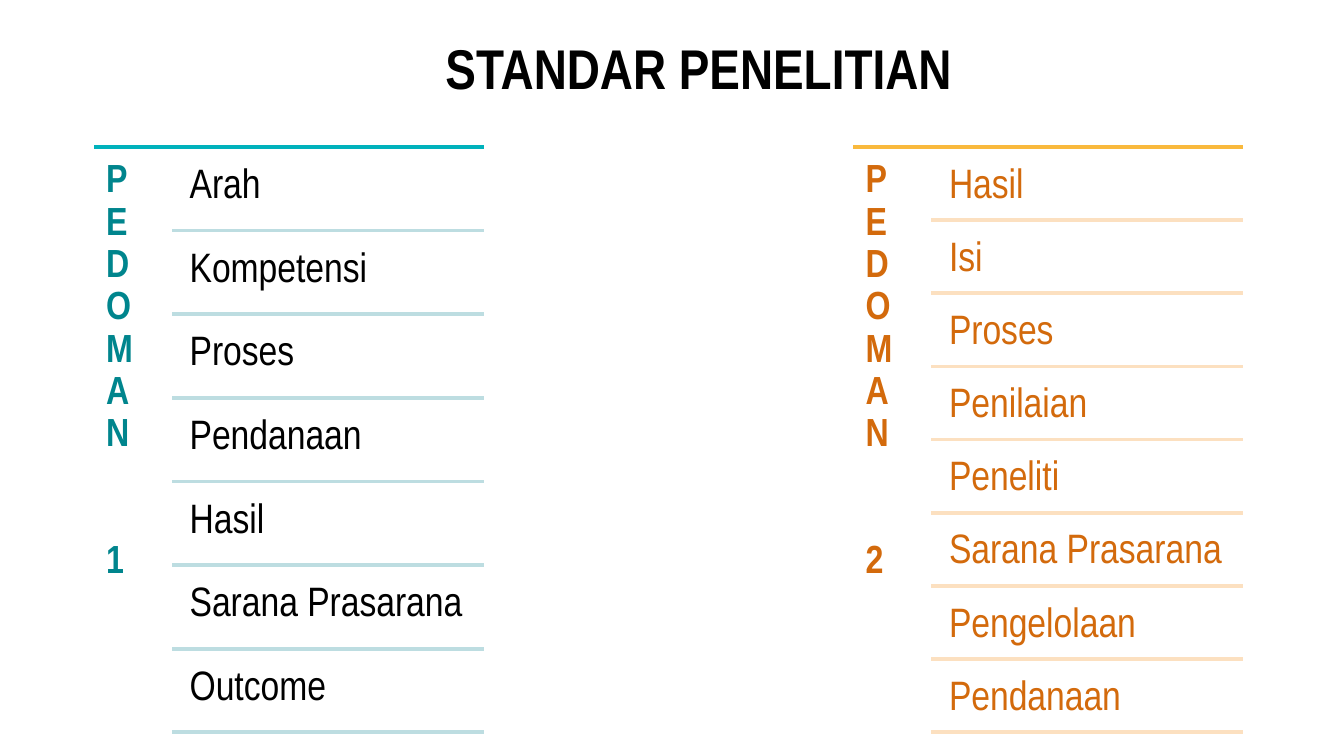
from lxml.etree import SubElement
from pptx import Presentation
from pptx.dml.color import RGBColor
from pptx.enum.shapes import MSO_CONNECTOR
from pptx.enum.text import MSO_ANCHOR, PP_ALIGN
from pptx.oxml.ns import qn
from pptx.util import Pt

FONT = "Arial Narrow"
BLACK = RGBColor(0x00, 0x00, 0x00)
TEAL = RGBColor(0x00, 0xB2, 0xBC)
DARK_TEAL = RGBColor(0x00, 0x85, 0x8D)
PALE_TEAL = RGBColor(0xBD, 0xDD, 0xE1)
AMBER = RGBColor(0xF9, 0xB9, 0x3D)
ORANGE = RGBColor(0xD3, 0x6A, 0x0C)
PALE_ORANGE = RGBColor(0xFC, 0xE0, 0xC0)

LABEL_WIDTH = 41.8
ROW_INDENT = 2.9
ROW_GAP = 0.05  # share of the row pitch left above each text


def add_text(shapes, text, x, y, w, h, size, color, bold=False, inset=6.5,
             align=PP_ALIGN.LEFT, anchor=MSO_ANCHOR.TOP, stacked=False):
    tf = shapes.add_textbox(Pt(x), Pt(y), Pt(w), Pt(h)).text_frame
    tf.word_wrap = True
    tf.vertical_anchor = anchor
    tf.margin_left = tf.margin_right = Pt(inset)
    tf.margin_top = tf.margin_bottom = Pt(inset)
    if stacked:
        tf._txBody.bodyPr.set("vert", "wordArtVert")
    p = tf.paragraphs[0]
    p.alignment = align
    p.line_spacing = 0.9
    r = p.add_run()
    r.text = text
    r.font.name = FONT
    r.font.size = Pt(size)
    r.font.bold = bold
    r.font.color.rgb = color


def add_rule(shapes, x, y, w, color):
    line = shapes.add_connector(MSO_CONNECTOR.STRAIGHT,
                                Pt(x), Pt(y), Pt(x + w), Pt(y))
    line.line.color.rgb = color
    line.line.width = Pt(2)
    SubElement(line._element.spPr, qn("a:effectLst"))


def add_title(slide, text, x, y, w, h):
    add_text(slide.shapes, text, x, y, w, h, 30, BLACK, bold=True, inset=7.2,
             align=PP_ALIGN.CENTER, anchor=MSO_ANCHOR.MIDDLE)


def add_guideline(slide, label, items, x, y, w, h,
                  top_color, label_color, text_color, rule_color):
    """Stacked label on the left, ruled rows of equal height on the right."""
    shapes = slide.shapes.add_group_shape().shapes
    add_rule(shapes, x, y, w, top_color)
    add_text(shapes, label, x, y, LABEL_WIDTH, h, 21, label_color,
             bold=True, stacked=True)
    row_x, row_w = x + LABEL_WIDTH, w - LABEL_WIDTH
    pitch = h / len(items)
    for i, item in enumerate(items):
        top = y + i * pitch
        add_text(shapes, item, row_x + ROW_INDENT, top + ROW_GAP * pitch,
                 row_w - ROW_INDENT, (1 - ROW_GAP) * pitch, 22, text_color)
        add_rule(shapes, row_x, top + pitch, row_w, rule_color)


def main():
    prs = Presentation()
    prs.slide_width, prs.slide_height = Pt(720), Pt(405)
    slide = prs.slides.add_slide(prs.slide_layouts[6])

    add_title(slide, "STANDAR PENELITIAN", 50.4, 14.4, 648, 47.5)
    add_guideline(
        slide, "PEDOMAN  1",
        ["Arah", "Kompetensi", "Proses", "Pendanaan", "Hasil",
         "Sarana Prasarana", "Outcome"],
        50.4, 78.7, 208.8, 313.6, TEAL, DARK_TEAL, BLACK, PALE_TEAL)
    add_guideline(
        slide, "PEDOMAN  2",
        ["Hasil", "Isi", "Proses", "Penilaian", "Peneliti",
         "Sarana Prasarana", "Pengelolaan", "Pendanaan"],
        457.2, 78.7, 208.8, 313.6, AMBER, ORANGE, ORANGE, PALE_ORANGE)
    prs.save("out.pptx")


if __name__ == "__main__":
    main()
